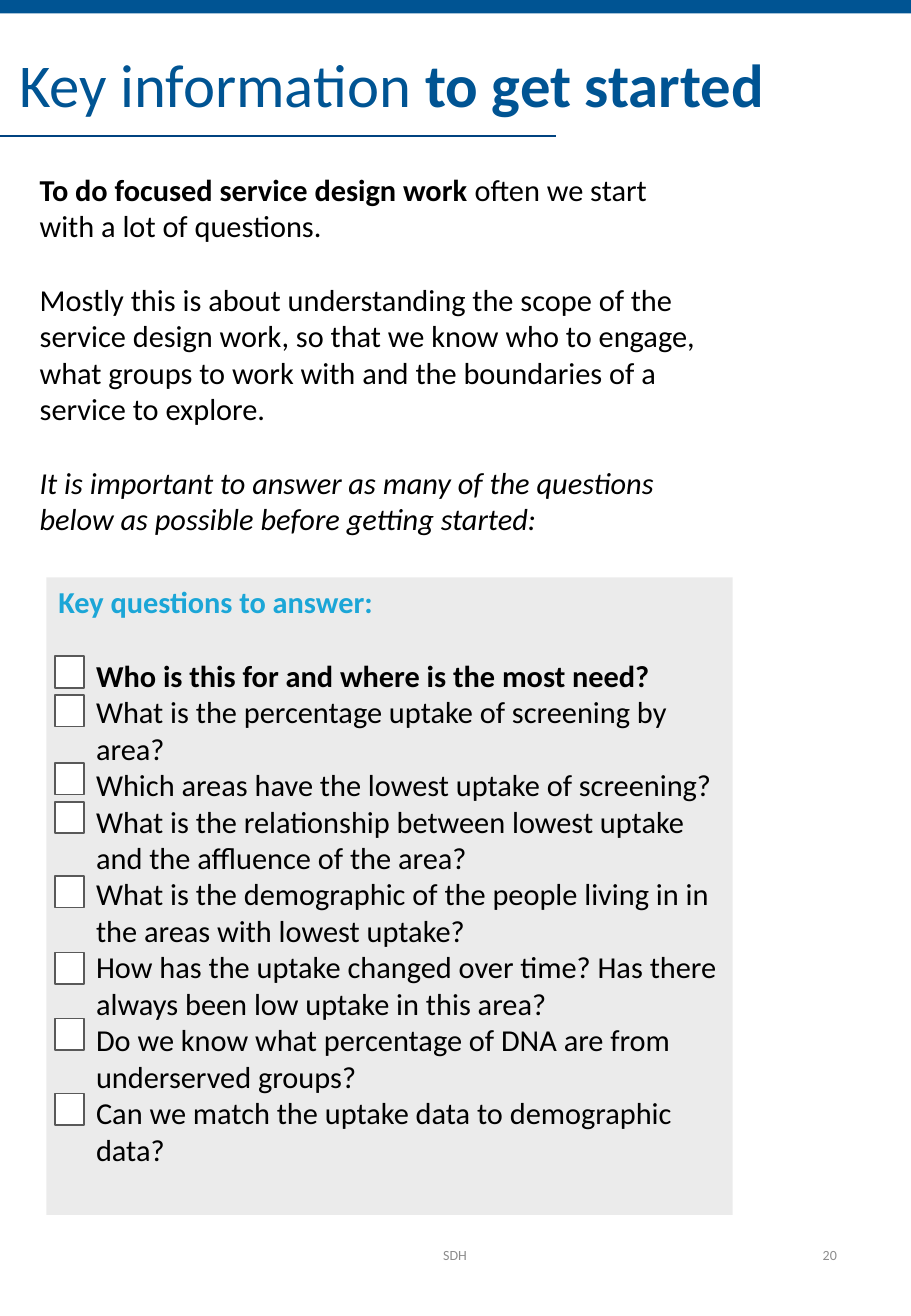
from lxml import etree
from pptx import Presentation
from pptx.dml.color import RGBColor
from pptx.enum import shapes, text
from pptx.oxml.ns import qn
from pptx.util import Cm, Pt

BLUE = RGBColor(0x00, 0x54, 0x93)
NAVY = RGBColor(0x00, 0x43, 0x80)
SKY = RGBColor(0x1B, 0xA6, 0xD7)
PANEL = RGBColor(0xD9, 0xD9, 0xD9)
OUTLINE = RGBColor(0x59, 0x59, 0x59)
GREY = RGBColor(0x8C, 0x8C, 0x8C)
BLACK = RGBColor(0, 0, 0)
WHITE = RGBColor(0xFF, 0xFF, 0xFF)

BODY_SIZE = 18
LINE_GAP = Pt(22)  # one line of body text

INTRO = [
    [("To do focused service design work ", {"bold": True}),
     ("often we start with a lot of questions.", {})],
    [("Mostly this is about understanding the scope of the service design work, "
      "so that we know who to engage, what groups to work with and the "
      "boundaries of a service to explore.", {})],
    [("It is important to answer as many of the questions below as possible "
      "before getting started:", {"italic": True})],
]

# Question and the drop in cm of its tick box below the panel top
QUESTIONS = [
    ("Who is this for and where is the most need?", 1.65),
    ("What is the percentage uptake of screening by area?", 2.46),
    ("Which areas have the lowest uptake of screening?", 3.88),
    ("What is the relationship between lowest uptake and the affluence of the area?", 4.69),
    ("What is the demographic of the people living in in the areas with lowest uptake?", 6.24),
    ("How has the uptake changed over time? Has there always been low uptake in this area?", 7.84),
    ("Do we know what percentage of DNA are from underserved groups?", 9.22),
    ("Can we match the uptake data to demographic data?", 10.79),
]


def add_run(p, words, size, color, **formats):
    r = p.add_run()
    r.text = words
    r.font.color.rgb = color
    for name, value in {"name": "Calibri", "size": Pt(size), **formats}.items():
        setattr(r.font, name, value)


def add_text(slide, left, top, width, height, anchor=text.MSO_ANCHOR.TOP):
    tf = slide.shapes.add_textbox(Cm(left), Cm(top), Cm(width), Cm(height)).text_frame
    tf.word_wrap = True
    tf.vertical_anchor = anchor
    return tf


def add_rect(slide, left, top, width, height, fill, line=None):
    sp = slide.shapes.add_shape(shapes.MSO_SHAPE.RECTANGLE,
                                Cm(left), Cm(top), Cm(width), Cm(height))
    sp.shadow.inherit = False
    sp.fill.solid()
    sp.fill.fore_color.rgb = fill
    if line is None:
        sp.line.fill.background()
    else:
        sp.line.color.rgb = line
        sp.line.width = Pt(1)
    return sp


def header(slide, left, top, width):
    # Top band
    add_rect(slide, left, top, width, 0.28, BLUE)
    # Rule under the title
    rule = slide.shapes.add_connector(shapes.MSO_CONNECTOR.STRAIGHT,
                                      Cm(left), Cm(top + 2.84),
                                      Cm(left + 11.63), Cm(top + 2.84))
    rule.line.color.rgb = NAVY
    rule.line.width = Pt(1)
    etree.SubElement(rule._element.spPr, qn("a:effectLst"))
    # Title
    p = add_text(slide, left + 0.15, top + 0.86, 18.3, 1.8).paragraphs[0]
    add_run(p, "Key information ", 36, BLUE)
    add_run(p, "to get started", 36, BLUE, bold=True)


def introduction(slide, left, top, width, height):
    tf = add_text(slide, left, top, width, height)
    for i, runs in enumerate(INTRO):
        p = tf.add_paragraph() if i else tf.paragraphs[0]
        p.space_before = LINE_GAP if i else Pt(0)
        for words, formats in runs:
            add_run(p, words, BODY_SIZE, BLACK, **formats)


def checklist(slide, left, top, width, height):
    # Translucent panel
    sp = add_rect(slide, left, top, width, height, PANEL)
    color = sp._element.spPr.find(".//" + qn("a:srgbClr"))
    etree.SubElement(color, qn("a:alpha"), val="52000")
    tf = sp.text_frame
    tf.word_wrap = True
    tf.vertical_anchor = text.MSO_ANCHOR.TOP
    # Heading
    p = tf.paragraphs[0]
    p.alignment = text.PP_ALIGN.LEFT
    p.space_after = LINE_GAP
    add_run(p, "Key questions to answer:", BODY_SIZE, SKY, bold=True)
    # Indented questions, each with a tick box
    for i, (question, drop) in enumerate(QUESTIONS):
        p = tf.add_paragraph()
        p.alignment = text.PP_ALIGN.LEFT
        p._p.get_or_add_pPr().set("marL", str(Cm(0.79)))
        add_run(p, question, BODY_SIZE, BLACK, bold=i == 0)
        add_rect(slide, left + 0.18, top + drop, 0.61, 0.66, WHITE, OUTLINE)


def footer(slide, top, height):
    for words, left, width, align in [
        ("SDH", 6.3, 6.43, text.PP_ALIGN.CENTER),
        ("20", 13.46, 4.29, text.PP_ALIGN.RIGHT),
    ]:
        p = add_text(slide, left, top, width, height, text.MSO_ANCHOR.MIDDLE).paragraphs[0]
        p.alignment = align
        add_run(p, words, 8.3, GREY)


def main():
    prs = Presentation()
    prs.slide_width, prs.slide_height = Cm(19.05), Cm(27.51)
    slide = prs.slides.add_slide(prs.slide_layouts[6])
    header(slide, 0, 0, 19.05)
    introduction(slide, 0.58, 3.45, 14.35, 7.95)
    checklist(slide, 0.97, 12.07, 14.35, 13.33)
    footer(slide, 25.5, 1.47)
    prs.save("out.pptx")


if __name__ == "__main__":
    main()
